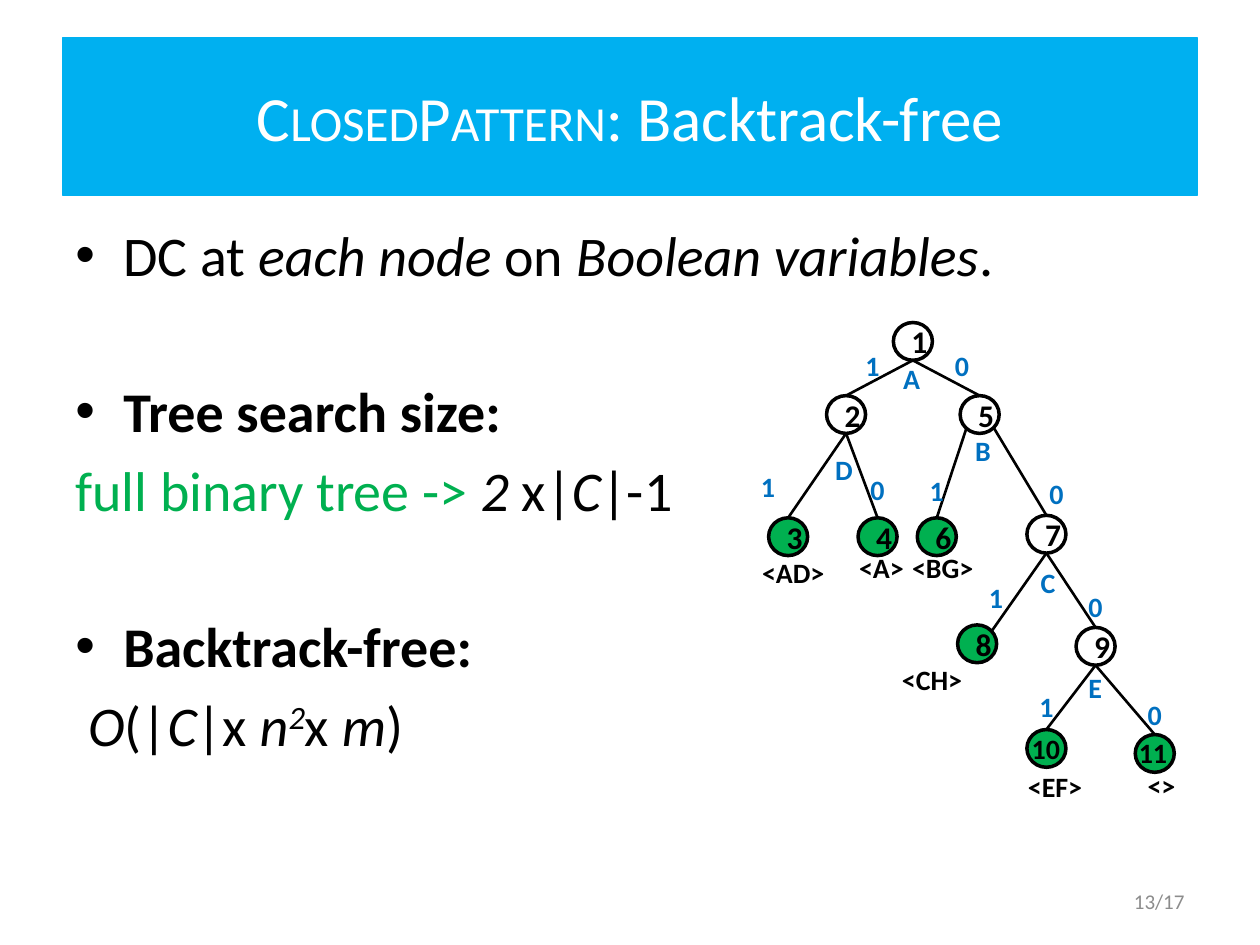
import pptx
import pptx.util
import pptx.dml.color
import pptx.enum.shapes
import pptx.enum.text
import pptx.oxml.xmlchemy

Inches = pptx.util.Inches
Pt = pptx.util.Pt
RGB = pptx.dml.color.RGBColor
SHAPE = pptx.enum.shapes.MSO_SHAPE
ALIGN = pptx.enum.text.PP_ALIGN
MIDDLE = pptx.enum.text.MSO_ANCHOR.MIDDLE
make = pptx.oxml.xmlchemy.OxmlElement

BLACK = RGB(0x00, 0x00, 0x00)
WHITE = RGB(0xFF, 0xFF, 0xFF)
GRAY = RGB(0x8C, 0x8C, 0x8C)
SKY = RGB(0x00, 0xB0, 0xF0)
BLUE = RGB(0x00, 0x70, 0xC0)
GREEN = RGB(0x00, 0xB0, 0x50)

WIDE, HIGH = 0.31, 0.3  # size of a tree node

# number: (left, top, is leaf)
NODES = {
    1: (7.09, 2.56, False),
    2: (6.56, 3.14, False),
    5: (7.62, 3.14, False),
    3: (6.1, 4.11, True),
    4: (6.81, 4.11, True),
    6: (7.28, 4.11, True),
    8: (7.6, 4.96, True),
    10: (8.15, 5.79, True),
    11: (9.01, 5.83, True),
    7: (8.15, 4.09, False),
    9: (8.54, 4.98, False),
}
EDGES = [(1, 2), (1, 5), (2, 3), (2, 4), (5, 6), (5, 7),
         (7, 8), (7, 9), (9, 10), (9, 11)]
# edges that leave or meet a node off its middle
STARTS = {(5, 6): (7.67, 3.4), (5, 7): (7.89, 3.4)}
ENDS = {(7, 8): (7.87, 5.01)}

# text, left, top, width
VARS = [("A", 7.07, 2.82, 0.34), ("D", 6.53, 3.54, 0.31),
        ("B", 7.64, 3.39, 0.31), ("C", 8.16, 4.44, 0.31),
        ("E", 8.54, 5.27, 0.31)]
BITS = [("1", 6.77, 2.72), ("0", 7.48, 2.72), ("1", 5.94, 3.68),
        ("0", 6.81, 3.7), ("1", 7.28, 3.71), ("0", 8.23, 3.73),
        ("1", 7.75, 4.56), ("0", 8.54, 4.63), ("1", 8.15, 5.42),
        ("0", 9.01, 5.49)]
TAGS = [("10", 8.09, 5.76, 0.43), ("11", 8.94, 5.79, 0.43),
        ("<AD>", 5.95, 4.36, 0.71), ("<A>", 6.72, 4.32, 0.56),
        ("<BG>", 7.14, 4.32, 0.7), ("<CH>", 7.06, 5.21, 0.69),
        ("<EF>", 8.06, 6.06, 0.64), ("<>", 9.01, 6.05, 0.43)]

ITALIC = {"italic": True}
BOLD = {"bold": True}
# is bulleted, space before in points, runs
BODY = [
    (True, 6.4, [("DC at ", {}), ("each node ", ITALIC), ("on ", {}),
                 ("Boolean variables", ITALIC), (".", {})]),
    (True, 51, [("Tree search size:", BOLD)]),
    (False, 6.4, [("full binary tree -> ", {"color": GREEN}), ("2 ", ITALIC),
                  ("x|", {}), ("C", ITALIC), ("|-1", {})]),
    (True, 51, [("Backtrack-free:", BOLD)]),
    (False, 6.4, [(" O", ITALIC), ("(|", {}), ("C", ITALIC), ("|x ", {}),
                  ("n", ITALIC), ("2", {"italic": True, "raised": True}),
                  ("x ", {}), ("m", ITALIC), (")", {})]),
]


def write(para, text, size=16, color=BLACK, bold=False, italic=False,
          raised=False):
    """Add one formatted run to a paragraph."""
    run = para.add_run()
    run.text = text
    font = run.font
    font.name, font.size = "Calibri", Pt(size)
    font.bold, font.italic = bold, italic
    font.color.rgb = color
    if raised:
        font._element.set("baseline", "30000")


def add_box(shapes, left, top, width, height, wrap=True):
    box = shapes.add_textbox(Inches(left), Inches(top),
                             Inches(width), Inches(height))
    box.text_frame.word_wrap = wrap
    return box.text_frame


def add_form(shapes, kind, left, top, width, height, fill, line, weight):
    """Add a preset shape and return its centred text frame."""
    form = shapes.add_shape(kind, Inches(left), Inches(top),
                            Inches(width), Inches(height))
    form.shadow.inherit = False
    if fill is None:
        form.fill.background()
    else:
        form.fill.solid()
        form.fill.fore_color.rgb = fill
    form.line.color.rgb = line
    form.line.width = Pt(weight)
    frame = form.text_frame
    frame.vertical_anchor = MIDDLE
    frame.paragraphs[0].alignment = ALIGN.CENTER
    return frame


def add_label(shapes, text, left, top, width=0.32, color=BLACK):
    frame = add_box(shapes, left, top, width, 0.37, wrap=False)
    write(frame.paragraphs[0], text, color=color, bold=True)


def add_edge(shapes, start, end):
    points = [Inches(v) for v in (*start, *end)]
    edge = shapes.add_connector(
        pptx.enum.shapes.MSO_CONNECTOR.STRAIGHT, *points)
    edge.line.color.rgb = BLACK
    edge.line.width = Pt(1.5)
    edge._element.spPr.append(make("a:effectLst"))


def add_bullet(para):
    props = para._p.get_or_add_pPr()
    props.set("marL", str(Inches(0.38)))
    props.set("indent", str(-Inches(0.38)))
    face = make("a:buFont")
    face.set("typeface", "Arial")
    mark = make("a:buChar")
    mark.set("char", "•")
    props.extend([face, mark])


def add_body(shapes):
    frame = add_box(shapes, 0.5, 1.7, 9.38, 5)
    for i, (dot, gap, runs) in enumerate(BODY):
        para = frame.add_paragraph() if i else frame.paragraphs[0]
        para.space_before = Pt(gap)
        if dot:
            add_bullet(para)
        for text, style in runs:
            write(para, text, size=32, **style)


def add_title(shapes):
    frame = add_form(shapes, SHAPE.RECTANGLE, 0.5, 0.3, 9, 1.25,
                     SKY, SKY, 0.75)
    for text, size in [("C", 36), ("LOSED", 28), ("P", 36), ("ATTERN", 28),
                       (": Backtrack-free", 36)]:
        write(frame.paragraphs[0], text, size=size, color=WHITE)


def add_tree(shapes):
    tree = shapes.add_group_shape().shapes
    for num, (left, top, leaf) in NODES.items():
        frame = add_form(tree, SHAPE.OVAL, left, top, WIDE, HIGH,
                         GREEN if leaf else None, BLACK, 2)
        if num < 10:  # longer numbers get a label of their own
            write(frame.paragraphs[0], str(num), size=18, bold=True)
    for pair in EDGES:
        (x1, y1, _), (x2, y2, _) = (NODES[num] for num in pair)
        add_edge(tree, STARTS.get(pair, (x1 + WIDE / 2, y1 + HIGH)),
                 ENDS.get(pair, (x2 + WIDE / 2, y2)))
    for item in VARS + BITS:
        add_label(tree, *item, color=BLUE)
    for item in TAGS:
        add_label(tree, *item)


def add_count(shapes):
    frame = add_box(shapes, 7.17, 6.95, 2.33, 0.4)
    frame.vertical_anchor = MIDDLE
    para = frame.paragraphs[0]
    para.alignment = ALIGN.RIGHT
    write(para, "13/17", size=12, color=GRAY)


def main():
    deck = pptx.Presentation()
    deck.slide_width, deck.slide_height = Inches(10), Inches(7.5)
    shapes = deck.slides.add_slide(deck.slide_layouts[6]).shapes
    add_body(shapes)
    add_count(shapes)
    add_title(shapes)
    add_tree(shapes)
    deck.save("out.pptx")


if __name__ == "__main__":
    main()
